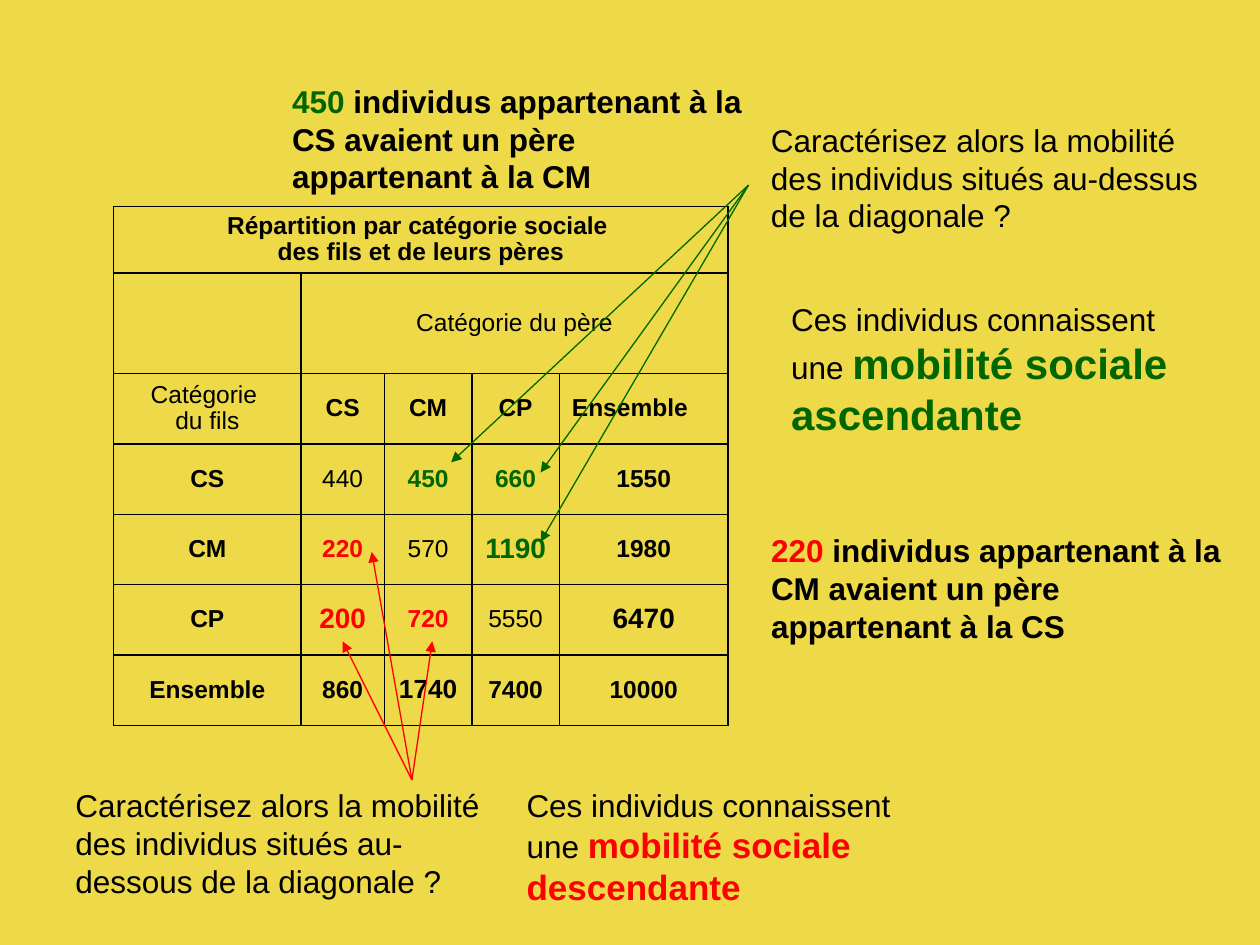
from lxml import etree
from pptx import Presentation, util as u
from pptx.dml.color import RGBColor
from pptx.enum import shapes, text
from pptx.oxml.ns import qn

Pt = u.Pt
YELLOW = RGBColor(0xEE, 0xD9, 0x48)
BLACK = RGBColor(0, 0, 0)
GREEN = RGBColor(0, 0x66, 0)
RED = RGBColor(0xFF, 0, 0)
FONT = "Arial"

TITLE = ["Répartition par catégorie sociale ", "des fils et de leurs pères"]
FATHER = ["Catégorie du père"]
SON = ["Catégorie ", "du fils"]
CATEGORIES = ["CS", "CM", "CP", "Ensemble"]
COUNTS = [
    [440, 450, 660, 1550],
    [220, 570, 1190, 1980],
    [200, 720, 5550, 6470],
    [860, 1740, 7400, 10000],
]
LARGER = {1190: 16, 200: 16, 6470: 16, 1740: 15}
TABLE_AT = (65, 118)
COLS = [107, 47.7, 50, 50, 96.5]
ROWS = [38, 57.5] + [40.2] * 5

# (left, top, width, height), runs of (text, size, colour, bold)
NOTES = [
    ((433.5, 65.5, 266.4, 72), [
        ("Caractérisez alors la mobilité des individus situés au-dessus de la diagonale ?", 18, BLACK, False)]),
    ((159.8, 43.2, 272.2, 72), [
        ("450 ", 18, GREEN, True),
        ("individus appartenant à la CS avaient un père appartenant à la CM", 18, BLACK, True)]),
    ((36, 445.7, 266.4, 72), [
        ("Caractérisez alors la mobilité des individus situés au-dessous de la diagonale ?", 18, BLACK, False)]),
    ((433.5, 300.2, 272.2, 72), [
        ("220 ", 18, RED, True),
        ("individus appartenant à la CM avaient un père appartenant à la CS", 18, BLACK, True)]),
    ((445, 167.8, 249.8, 87), [
        ("Ces individus connaissent une ", 18, BLACK, False),
        ("mobilité sociale ascendante", 24, GREEN, True)]),
    ((293.8, 445.7, 240.5, 78), [
        ("Ces individus connaissent une ", 18, BLACK, False),
        ("mobilité sociale descendante", 20, RED, True)]),
]

# colour, common start, arrow tips
ARROWS = [
    (GREEN, (427.7, 105.8), [(257.8, 264.2), (308.9, 270), (308.9, 309.6)]),
    (RED, (235.4, 445.7), [(212.4, 315.4), (247, 366.5), (195.8, 366.5)]),
]


def add_run(p, words, size, colour, bold):
    r = p.add_run()
    r.text = words
    r.font.name = FONT
    r.font.size = Pt(size)
    r.font.color.rgb = colour
    r.font.bold = bold


def fill_cell(cell, lines, size=14, colour=BLACK, bold=True, align=text.PP_ALIGN.CENTER):
    for i, line in enumerate(lines):
        p = cell.text_frame.add_paragraph() if i else cell.text_frame.paragraphs[0]
        p.alignment = align
        p.line_spacing = 0.96
        add_run(p, line, size, colour, bold)


def clear_and_outline(cell):
    cell.vertical_anchor = text.MSO_ANCHOR.MIDDLE
    tc_pr = cell._tc.get_or_add_tcPr()
    for side in ("lnL", "lnR", "lnT", "lnB"):
        ln = etree.SubElement(tc_pr, qn("a:" + side), w=str(Pt(1)))
        fill = etree.SubElement(ln, qn("a:solidFill"))
        etree.SubElement(fill, qn("a:srgbClr"), val=str(BLACK))
    cell.fill.background()


def add_mobility_table(s):
    frame = s.shapes.add_table(len(ROWS), len(COLS), *map(Pt, TABLE_AT),
                               Pt(sum(COLS)), Pt(sum(ROWS)))
    table = frame.table
    table.first_row = table.horz_banding = False
    for col, width in zip(table.columns, COLS):
        col.width = Pt(width)
    for row, height in zip(table.rows, ROWS):
        row.height = Pt(height)
    for cell in table.iter_cells():
        clear_and_outline(cell)
    table.cell(0, 0).merge(table.cell(0, 4))
    table.cell(1, 1).merge(table.cell(1, 4))

    fill_cell(table.cell(0, 0), TITLE)
    fill_cell(table.cell(1, 1), FATHER, bold=False)
    fill_cell(table.cell(2, 0), SON, bold=False)
    total = len(CATEGORIES) - 1
    for i, name in enumerate(CATEGORIES):
        align = text.PP_ALIGN.LEFT if i == total else text.PP_ALIGN.CENTER
        fill_cell(table.cell(2, i + 1), [name], align=align)
        fill_cell(table.cell(i + 3, 0), [name])
        for j, count in enumerate(COUNTS[i]):
            colour = BLACK
            if i != j and total not in (i, j):
                colour = GREEN if j > i else RED
            fill_cell(table.cell(i + 3, j + 1), [str(count)], LARGER.get(count, 14),
                      colour, bold=i != j or i == total)


def add_note(s, box, runs):
    tf = s.shapes.add_textbox(*map(Pt, box)).text_frame
    tf.word_wrap = True
    tf.auto_size = text.MSO_AUTO_SIZE.SHAPE_TO_FIT_TEXT
    for run in runs:
        add_run(tf.paragraphs[0], *run)


def add_arrow(s, start, tip, colour):
    line = s.shapes.add_connector(shapes.MSO_CONNECTOR.STRAIGHT, *map(Pt, start + tip))
    line.line.color.rgb = colour
    line.line.width = Pt(0.75)
    etree.SubElement(line.line._get_or_add_ln(), qn("a:tailEnd"), type="triangle")
    etree.SubElement(line._element.spPr, qn("a:effectLst"))


def main():
    prs = Presentation()
    prs.slide_width, prs.slide_height = Pt(720), Pt(540)
    s = prs.slides.add_slide(prs.slide_layouts[6])
    s.background.fill.solid()
    s.background.fill.fore_color.rgb = YELLOW
    add_mobility_table(s)
    for box, runs in NOTES:
        add_note(s, box, runs)
    for colour, start, tips in ARROWS:
        for tip in tips:
            add_arrow(s, start, tip, colour)
    prs.save("out.pptx")


if __name__ == "__main__":
    main()
